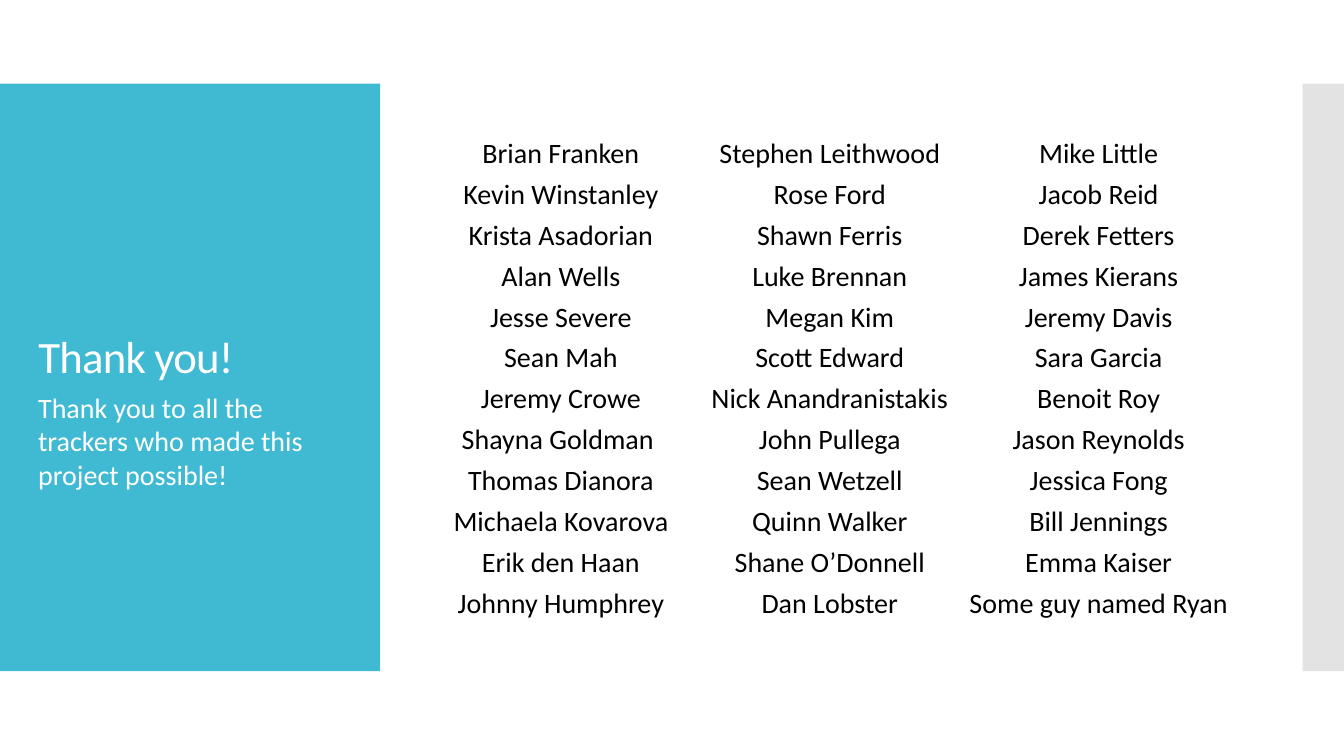
from lxml.etree import SubElement
from pptx import Presentation
from pptx.dml.color import RGBColor
from pptx.enum.shapes import MSO_SHAPE
from pptx.enum.text import MSO_ANCHOR, MSO_AUTO_SIZE, PP_ALIGN
from pptx.oxml.ns import qn
from pptx.util import Inches, Pt

FONT = "Calibri"
WHITE, BLACK, TEAL, GREY = "FFFFFF", "000000", "40BAD2", "C8C8C8"
TEXT_LEFT, TEXT_WIDTH = 0.28, 3.1

TRACKERS = [
    ("Brian Franken", "Stephen Leithwood", "Mike Little"),
    ("Kevin Winstanley", "Rose Ford", "Jacob Reid"),
    ("Krista Asadorian", "Shawn Ferris", "Derek Fetters"),
    ("Alan Wells", "Luke Brennan", "James Kierans"),
    ("Jesse Severe", "Megan Kim", "Jeremy Davis"),
    ("Sean Mah", "Scott Edward", "Sara Garcia"),
    ("Jeremy Crowe", "Nick Anandranistakis", "Benoit Roy"),
    ("Shayna Goldman ", "John Pullega", "Jason Reynolds"),
    ("Thomas Dianora", "Sean Wetzell", "Jessica Fong"),
    ("Michaela Kovarova", "Quinn Walker", "Bill Jennings"),
    ("Erik den Haan", "Shane O’Donnell", "Emma Kaiser"),
    ("Johnny Humphrey", "Dan Lobster", "Some guy named Ryan"),
]


def color(hex_code):
    return RGBColor.from_string(hex_code)


def write(text_frame, text, size, hex_code, align=PP_ALIGN.LEFT):
    """Put one formatted paragraph in the frame and return it."""
    text_frame.text = text
    paragraph = text_frame.paragraphs[0]
    paragraph.alignment = align
    font = paragraph.runs[0].font
    font.name, font.size = FONT, Pt(size)
    font.color.rgb = color(hex_code)
    return paragraph


def add_panel(slide, left, width, hex_code, opacity=100):
    panel = slide.shapes.add_shape(
        MSO_SHAPE.RECTANGLE, Inches(left), Inches(0.83), Inches(width), Inches(5.83))
    panel.shadow.inherit = False
    panel.line.fill.background()
    panel.fill.solid()
    panel.fill.fore_color.rgb = color(hex_code)
    if opacity < 100:
        fill_color = panel.element.spPr.find(qn("a:solidFill"))[0]
        SubElement(fill_color, qn("a:alpha"), val=str(opacity * 1000))


def set_title(slide, text):
    title = slide.shapes.title
    title.left, title.top = Inches(TEXT_LEFT), Inches(1.25)
    title.width, title.height = Inches(TEXT_WIDTH), Inches(2.6)
    frame = title.text_frame
    frame.word_wrap = True
    frame.auto_size = MSO_AUTO_SIZE.NONE
    frame.vertical_anchor = MSO_ANCHOR.BOTTOM
    paragraph = write(frame, text, 32, WHITE)
    paragraph.line_spacing = 0.9
    paragraph.runs[0].font.element.set("spc", "-60") if hasattr(
        paragraph.runs[0].font, "element") else paragraph.runs[0]._r.get_or_add_rPr().set("spc", "-60")
    # Bring the title in front of the panels
    title.element.getparent().append(title.element)


def add_names_table(slide, rows):
    row_count, column_count = len(rows), len(rows[0])
    table = slide.shapes.add_table(
        row_count, column_count, Inches(4.23), Inches(1.32), Inches(8), Inches(4.87)).table
    table.first_row = table.horz_banding = False
    for row_index, names in enumerate(rows):
        for column_index, name in enumerate(names):
            cell = table.cell(row_index, column_index)
            cell.fill.background()
            cell.vertical_anchor = MSO_ANCHOR.MIDDLE
            cell.margin_left = cell.margin_right = cell.margin_top = Inches(0.01)
            cell.margin_bottom = 0
            write(cell.text_frame, name, 20, BLACK, PP_ALIGN.CENTER)


def add_message(slide, text):
    box = slide.shapes.add_textbox(
        Inches(TEXT_LEFT), Inches(3.82), Inches(TEXT_WIDTH), Inches(2.54))
    box.text_frame.word_wrap = True
    write(box.text_frame, text, 20, WHITE)


def main():
    presentation = Presentation()
    presentation.slide_width, presentation.slide_height = Inches(13.33), Inches(7.5)
    slide = presentation.slides.add_slide(presentation.slide_layouts.get_by_name("Title Only"))
    add_panel(slide, 0, 3.77, TEAL)
    add_panel(slide, 12.92, 0.41, GREY, opacity=50)
    set_title(slide, "Thank you!")
    add_names_table(slide, TRACKERS)
    add_message(slide, "Thank you to all the trackers who made this project possible!")
    presentation.save("out.pptx")


if __name__ == "__main__":
    main()
